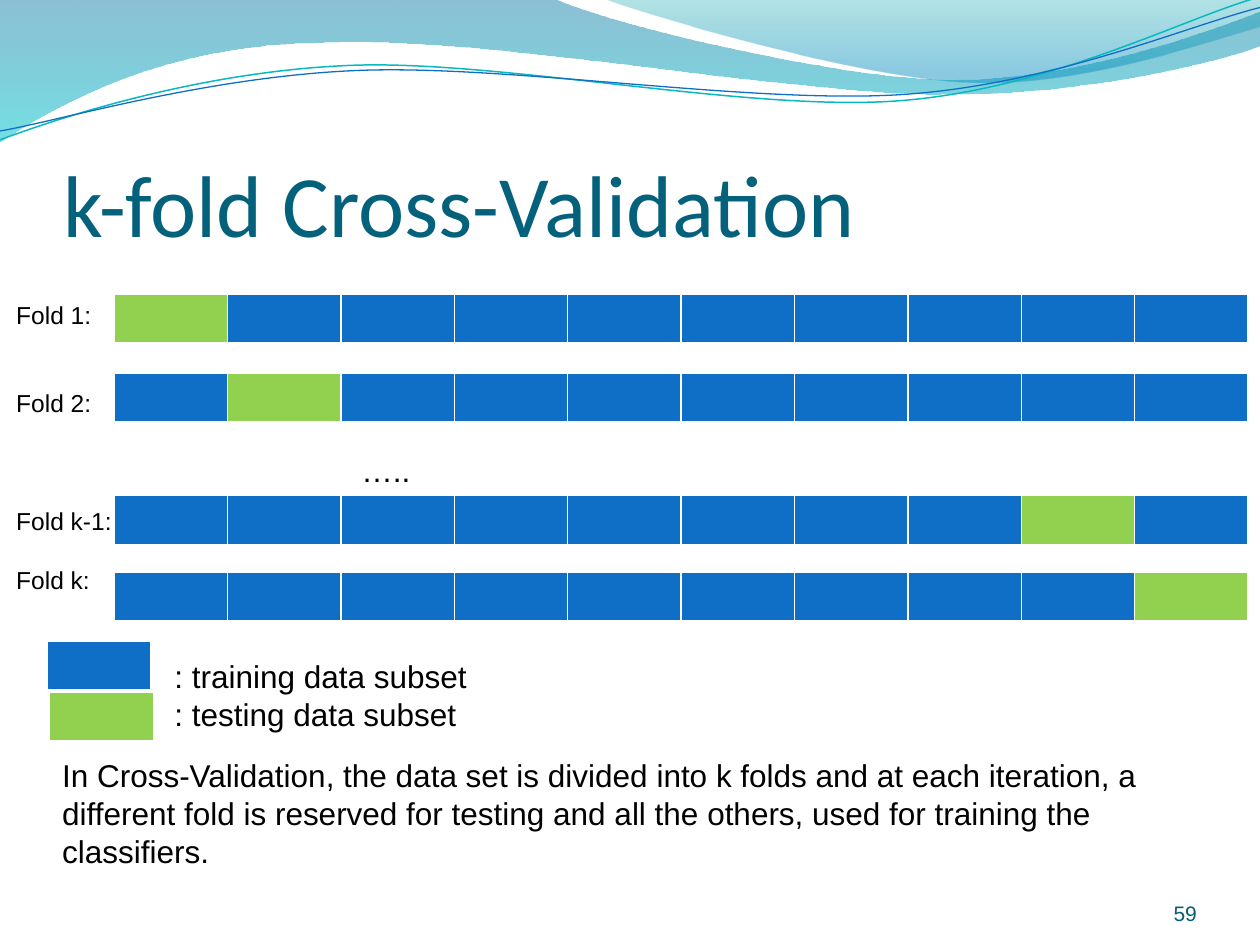
from dataclasses import dataclass
from math import cos, radians, sin

from lxml import etree
from pptx import Presentation
from pptx.dml.color import RGBColor
from pptx.enum.text import MSO_ANCHOR, MSO_AUTO_SIZE, PP_ALIGN
from pptx.oxml.ns import qn
from pptx.util import Pt

TOP, BOTTOM = MSO_ANCHOR.TOP, MSO_ANCHOR.BOTTOM
LEFT, RIGHT = PP_ALIGN.LEFT, PP_ALIGN.RIGHT
FIT, NO_FIT = MSO_AUTO_SIZE.SHAPE_TO_FIT_TEXT, MSO_AUTO_SIZE.NONE


@dataclass(frozen=True)
class Theme:
    """Colours, fonts and type sizes of the slide."""
    train: str = "0F6FC6"
    test: str = "92D050"
    border: str = "FFFFFF"
    text: str = "000000"
    title: str = "04617B"
    number: str = "045D75"
    teal_line: str = "0AB8BF"
    blue_line: str = "0F6FC6"
    band: tuple = ((0, "0074A1", 45), (1, "00C6CF", 55))
    corner: tuple = ((0, "00A1A9", 30), (0.8, "008BBF", 45))
    title_font: str = "Calibri"
    body_font: str = "Arial"
    title_size: int = 50
    body_size: int = 18
    label_size: int = 14
    number_size: int = 12


THEME = Theme()
WAVE_TILT = -2.7
FOLDS = 10
FOLD_ROWS = ((168.2, 0), (213.3, 1), (283.2, 8), (327, 9))
FOLD_LABELS = ("Fold 1:", "Fold 2:", "Fold k-1:", "Fold k:")
LABEL_GAPS = (0, 33.7, 50.7, 16.5)

BAND = ((0, -0.7), (
    (316.8, -0.7),
    (342.7, 12.2, 478.1, 45.4, 545.8, 45.4),
    (614.2, 45.4, 689.8, 18.7, 720, 6.5),
    (720.7, 25.9),
    (707.8, 31.7, 626.4, 54.7, 537.1, 54),
    (447.8, 54, 275, 20.2, 185, 24.5),
    (92.9, 25.2, 33.1, 59.8, -0.7, 81.4),
))
CORNER = ((344.9, -0.7), (
    (366.5, 7.9, 491, 44.6, 553.7, 46.8),
    (616.3, 49.7, 691.9, 23, 720, 15.1),
    (720, 0),
))
TEAL_WAVE = ((0, 79.9), (
    (34.6, 67, 113.8, 41, 199.4, 37.4),
    (284.4, 33.8, 427, 64.1, 513.4, 57.6),
    (599.8, 51.1, 675.4, 10.8, 718.6, -1.4),
))
BLUE_WAVE = ((0, 74.9), (
    (33.8, 69.1, 118.1, 43.9, 203.8, 40.3),
    (290.2, 36.7, 429.8, 59.8, 516.2, 54),
    (601.9, 48.2, 677.5, 15.1, 720, 4.3),
))
WAVE_CENTRE = (359.5, 41.8)


def rgb(color):
    """Turn a hex string into a colour."""
    return RGBColor.from_string(color)


def turn(point, degrees):
    """Turn a point clockwise about the centre of the waves."""
    cx, cy = WAVE_CENTRE
    dx, dy = point[0] - cx, point[1] - cy
    c, n = cos(radians(degrees)), sin(radians(degrees))
    return cx + dx * c - dy * n, cy + dx * n + dy * c


def add_outline(s, outline, close, tilt=0):
    """Add a freeform of lines and cubic curves without a shadow."""
    start, segments = outline
    points = [start] + [seg[i:i + 2] for seg in segments
                        for i in range(0, len(seg), 2)]
    first, *rest = [tuple(map(Pt, turn(p, -tilt))) for p in points]
    builder = s.shapes.build_freeform(*first)
    builder.add_line_segments(rest, close=close)
    sp = builder.convert_to_shape()
    sp.rotation = tilt
    sp.shadow.inherit = False
    steps = iter(list(sp._element.iter(qn("a:lnTo"))))
    for seg in segments:
        group = [next(steps) for _ in range(len(seg) // 2)]
        if len(group) == 3:
            curve = etree.Element(qn("a:cubicBezTo"))
            group[0].addprevious(curve)
            for step in group:
                curve.append(step[0])
                step.getparent().remove(step)
    return sp


def add_band(s, outline, stops):
    """Add a closed area with a translucent vertical gradient."""
    sp = add_outline(s, outline, True)
    sp.line.fill.background()
    sp.fill.gradient()
    sp.fill.gradient_angle = 270
    for stop, (position, color, _) in zip(sp.fill.gradient_stops, stops):
        stop.position = position
        stop.color.rgb = rgb(color)
    for clr, (_, _, alpha) in zip(sp._element.spPr.iter(qn("a:srgbClr")), stops):
        etree.SubElement(clr, qn("a:alpha"), val=str(alpha * 1000))


def add_wave(s, outline, color, width):
    """Add an open wavy line."""
    sp = add_outline(s, outline, False, WAVE_TILT)
    sp.fill.background()
    sp.line.color.rgb = rgb(color)
    sp.line.width = Pt(width)


def add_text(s, box, lines, size, color=THEME.text, font=THEME.body_font,
             align=LEFT, anchor=TOP, margins=None, gaps=None):
    """Add a text box with one paragraph per line."""
    sp = s.shapes.add_textbox(*map(Pt, box))
    tf = sp.text_frame
    tf.word_wrap = margins is not None
    tf.auto_size = NO_FIT if margins else FIT
    tf.vertical_anchor = anchor
    if margins:
        (tf.margin_left, tf.margin_top,
         tf.margin_right, tf.margin_bottom) = map(Pt, margins)
    tf.text = "\n".join(lines)
    for p, gap in zip(tf.paragraphs, gaps or [0] * len(lines)):
        p.alignment = align
        p.space_before = Pt(gap)
        p.font.size = Pt(size)
        p.font.name = font
        p.font.color.rgb = rgb(color)


def style_cell(cell, color):
    """Give a cell its fill and white borders."""
    cell.margin_top = cell.margin_bottom = 0
    tc_pr = cell._tc.get_or_add_tcPr()
    for side, width in (("L", 1), ("R", 1), ("T", 1), ("B", 3)):
        ln = etree.SubElement(tc_pr, qn(f"a:ln{side}"), w=str(Pt(width)))
        fill = etree.SubElement(ln, qn("a:solidFill"))
        etree.SubElement(fill, qn("a:srgbClr"), val=THEME.border)
    cell.fill.solid()
    cell.fill.fore_color.rgb = rgb(color)


def add_strip(s, left, top, width, colors):
    """Add a one-row table with a cell per colour."""
    table = s.shapes.add_table(1, len(colors), Pt(left), Pt(top),
                               Pt(width), Pt(28.8)).table
    table.first_row = table.horz_banding = False
    for i, color in enumerate(colors):
        style_cell(table.cell(0, i), color)


def main():
    """Build the slide and save it."""
    prs = Presentation()
    prs.slide_width, prs.slide_height = Pt(720), Pt(540)
    s = prs.slides.add_slide(prs.slide_layouts[6])

    add_band(s, BAND, THEME.band)
    add_band(s, CORNER, THEME.corner)
    add_wave(s, TEAL_WAVE, THEME.teal_line, 0.85)
    add_wave(s, BLUE_WAVE, THEME.blue_line, 0.75)
    add_text(s, (36.2, 55.8, 648, 90), ["k-fold Cross-Validation"], THEME.title_size,
             THEME.title, THEME.title_font, anchor=BOTTOM, margins=(0, 3.6, 0, 0))

    for top, test in FOLD_ROWS:
        add_strip(s, 65.2, top, 648,
                  [THEME.test if i == test else THEME.train for i in range(FOLDS)])
    add_text(s, (199.5, 254.2, 43.2, 28.8), ["….."], THEME.body_size)
    add_text(s, (2.2, 167.8, 69, 211), FOLD_LABELS, THEME.label_size, gaps=LABEL_GAPS)

    add_strip(s, 27.2, 366.5, 59, [THEME.train])
    add_strip(s, 28.1, 395.5, 59.8, [THEME.test])
    add_text(s, (92.6, 372, 182.9, 51.1),
             [": training data subset", ": testing data subset"], THEME.body_size)
    add_text(s, (28.4, 428.4, 639.4, 72.7), [
        "In Cross-Validation, the data set is divided into k folds and at each iteration, a",
        "different fold is reserved for testing and all the others, used for training the",
        "classifiers.",
    ], THEME.body_size)
    add_text(s, (624.2, 500.4, 59.8, 28.8), ["59"], THEME.number_size, THEME.number,
             align=RIGHT, anchor=BOTTOM, margins=(0, 0, 0, 0))
    prs.save("out.pptx")


if __name__ == "__main__":
    main()
